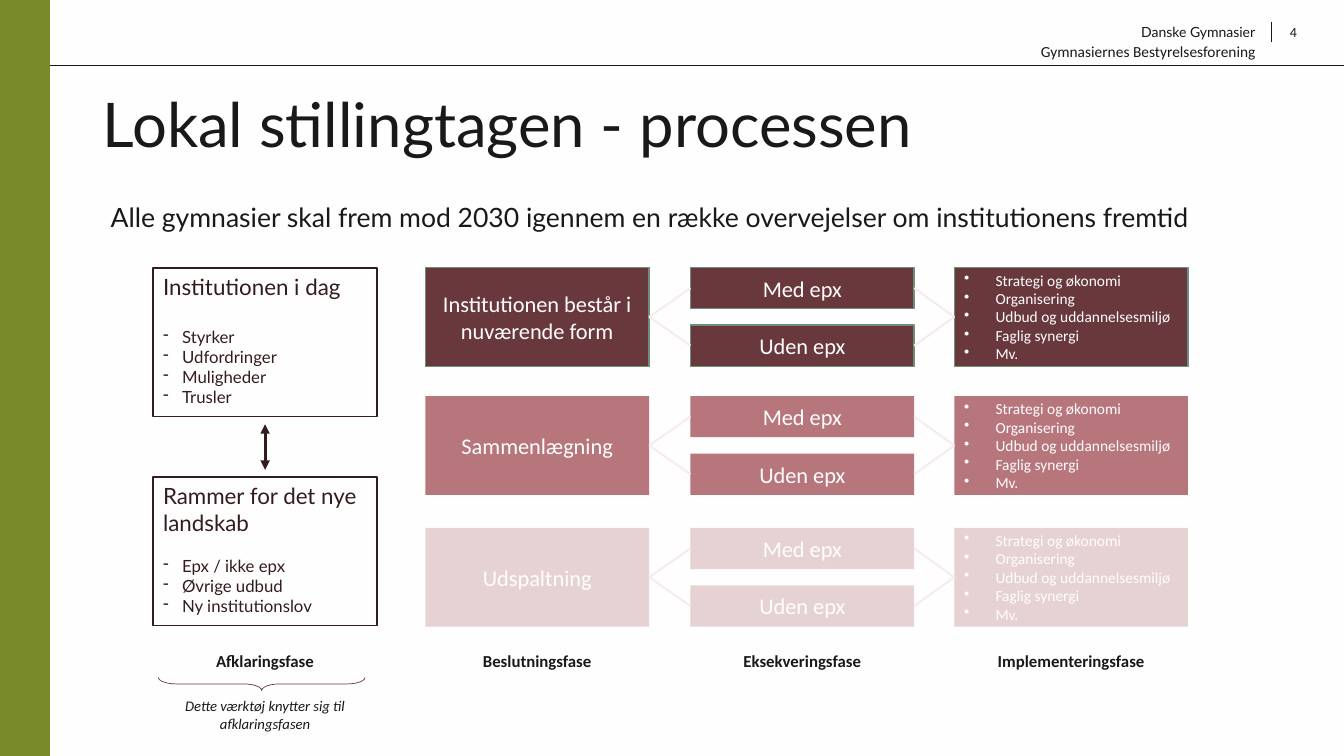
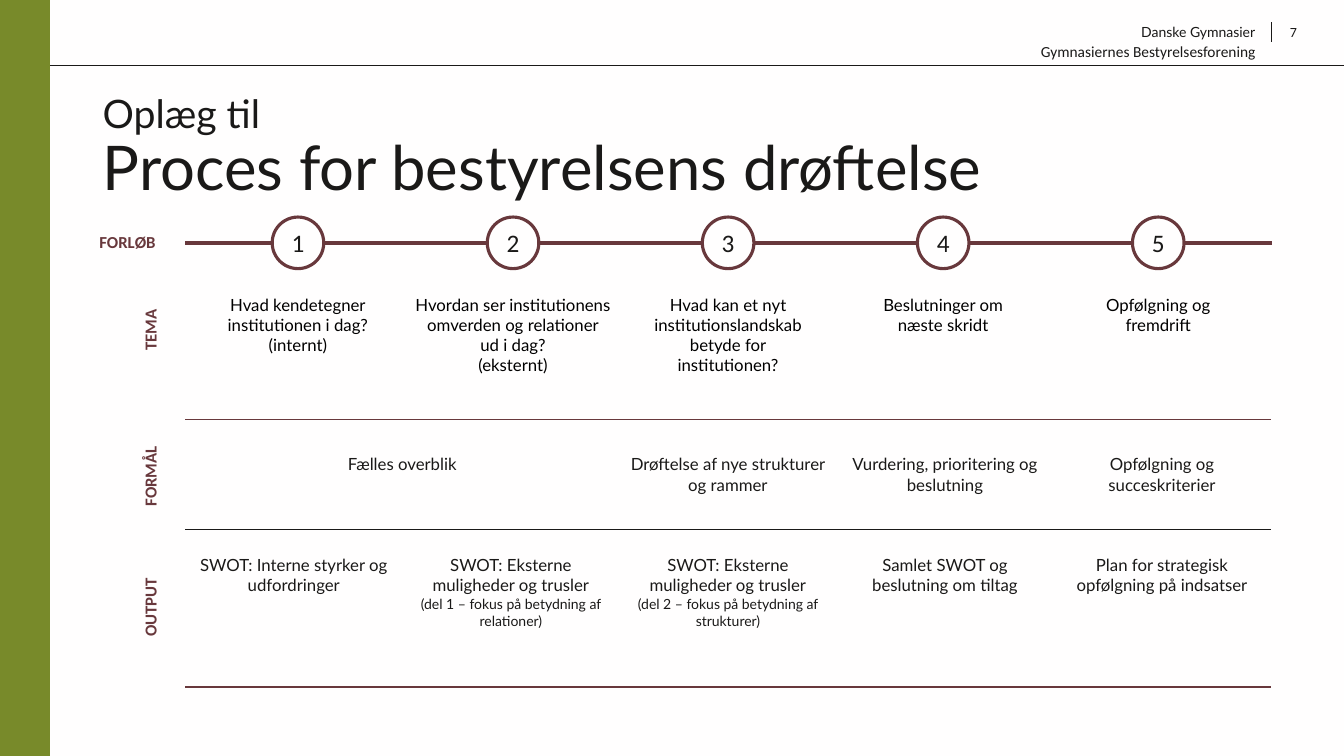
from lxml import etree
from pptx import Presentation
from pptx.dml.color import RGBColor
from pptx.enum import shapes, text
from pptx.oxml import ns
from pptx.util import Cm, Pt

PAPER = RGBColor(0xFF, 0xFE, 0xFE)
INK = RGBColor(0x1A, 0x19, 0x18)
BLACK = RGBColor(0, 0, 0)
GREEN = RGBColor(0x78, 0x8A, 0x2A)
SAGE = RGBColor(0x6E, 0x8D, 0x7B)
BROWN = RGBColor(0x34, 0x1C, 0x1E)
WINE = RGBColor(0x68, 0x38, 0x3C)
ROSE = RGBColor(0xB6, 0x76, 0x7C)
PALE = RGBColor(0xE6, 0xD2, 0xD3)
BLUSH = RGBColor(0xF7, 0xEB, 0xEF)

RECT = shapes.MSO_SHAPE.RECTANGLE
OVAL = shapes.MSO_SHAPE.OVAL
BRACE = shapes.MSO_SHAPE.RIGHT_BRACE
LEFT, MID, RIGHT = text.PP_ALIGN.LEFT, text.PP_ALIGN.CENTER, text.PP_ALIGN.RIGHT
TOP, HALF = text.MSO_ANCHOR.TOP, text.MSO_ANCHOR.MIDDLE


def put(page, at, lines=(), size=12, ink=INK, face="Calibri", align=MID, anchor=HALF,
        bold=None, slant=None, kind=None, fill=None, edge=None, width=1,
        mark=None, hang=0, first=0):
    """Add a text box, or a shape of the given kind; lines from number first on get the mark."""
    area = [Cm(n) for n in at]
    if kind is None:
        item = page.shapes.add_textbox(*area)
    else:
        item = page.shapes.add_shape(kind, *area)
        item.shadow.inherit = False
        if fill is None:
            item.fill.background()
        else:
            item.fill.solid()
            item.fill.fore_color.rgb = fill
        if edge is None:
            item.line.fill.background()
        else:
            item.line.color.rgb = edge
            item.line.width = Pt(width)
    frame = item.text_frame
    frame.word_wrap = True
    frame.vertical_anchor = anchor
    for n, line in enumerate(lines):
        para = frame.paragraphs[0] if n == 0 else frame.add_paragraph()
        para.text = line
        para.alignment = align
        if mark and n >= first:
            props = para._p.get_or_add_pPr()
            props.set("marL", str(Cm(hang)))
            props.set("indent", str(-Cm(hang)))
            etree.SubElement(props, ns.qn("a:buChar")).set("char", mark)
        font = para.font
        font.name, font.size, font.bold, font.italic = face, Pt(size), bold, slant
        font.color.rgb = ink
    return item


def rule(page, x1, y1, x2, y2, ink, width):
    """Add a straight line without a shadow."""
    line = page.shapes.add_connector(
        shapes.MSO_CONNECTOR.STRAIGHT, Cm(x1), Cm(y1), Cm(x2), Cm(y2))
    line.line.color.rgb = ink
    line.line.width = Pt(width)
    etree.SubElement(line._element.spPr, ns.qn("a:effectLst"))
    return line


deck = Presentation()
deck.slide_width, deck.slide_height = Cm(33.87), Cm(19.05)

# Shared header, band and title
pages = []
for number, title in [
    ("4", ["Lokal stillingtagen - processen"]),
    ("7", ["Oplæg til", "Proces for bestyrelsens drøftelse"]),
]:
    page = deck.slides.add_slide(deck.slide_layouts[6])
    page.background.fill.solid()
    page.background.fill.fore_color.rgb = PAPER
    rule(page, 0, 1.65, 33.87, 1.65, INK, 0.5)
    rule(page, 32.05, 0.56, 32.05, 1.07, INK, 0.75)
    put(page, (0, 0, 1.25, 19.05), kind=RECT, fill=GREEN, edge=GREEN)
    put(page, (28.07, 0.46, 3.81, 0.69), ["Danske Gymnasier"], 10,
        face="Lato", align=RIGHT, anchor=TOP)
    put(page, (25.98, 0.94, 6.27, 0.74), ["Gymnasiernes Bestyrelsesforening"], 11,
        align=LEFT, anchor=TOP)
    put(page, (32.26, 0.46, 1.24, 1.02), [number], 10, align=LEFT, anchor=TOP)
    head = put(page, (2.34, 2.26, 29.21, 3.68), title, 44, face="Lato",
               align=LEFT, anchor=TOP)
    for para in head.text_frame.paragraphs:
        para.line_spacing = 0.9
    if len(title) > 1:
        head.text_frame.paragraphs[0].font.size = Pt(28)
    pages.append(page)
choice, course = pages

# Slide 1: choices in three rows, phases in four columns
lead = put(choice, (2.54, 5.03, 29.21, 1.12),
           ["Alle gymnasier skal frem mod 2030 igennem en række overvejelser "
            "om institutionens fremtid"],
           19, face="Lato", align=LEFT, anchor=TOP)
lead.text_frame.paragraphs[0].line_spacing = 0.9

for top, gap, lines in [
    (6.75, 19, ["Institutionen i dag", "Styrker", "Udfordringer", "Muligheder", "Trusler"]),
    (12.02, 14, ["Rammer for det nye landskab", "Epx / ikke epx", "Øvrige udbud",
                 "Ny institutionslov"]),
]:
    card = put(choice, (3.86, top, 5.64, 3.75), lines, 12, BROWN, "Lato", LEFT, TOP,
               kind=RECT, fill=PAPER, edge=BROWN, mark="-", hang=0.48, first=1)
    paras = card.text_frame.paragraphs
    paras[0].font.size = Pt(16)
    paras[1].space_before = Pt(gap)

arrow = rule(choice, 6.68, 10.69, 6.68, 11.84, BROWN, 2.25)
for end in ("headEnd", "tailEnd"):
    etree.SubElement(arrow.line._get_or_add_ln(), ns.qn("a:" + end)).set("type", "triangle")

TASKS = ["Strategi og økonomi", "Organisering", "Udbud og uddannelsesmiljø",
         "Faglig synergi", "Mv."]
for top, name, fill, edge in [
    (6.74, "Institutionen består i nuværende form", WINE, SAGE),
    (9.98, "Sammenlægning", ROSE, None),
    (13.3, "Udspaltning", PALE, None),
]:
    look = dict(ink=PAPER, kind=RECT, fill=fill, edge=edge)
    form = put(choice, (10.72, top, 5.64, 2.49), [name], 16, **look)
    tasks = put(choice, (24.05, top, 5.89, 2.49), TASKS, 11, align=LEFT,
                mark="•", hang=0.79, **look)
    for n, label in enumerate(["Med epx", "Uden epx"]):
        option = put(choice, (17.4, top + n * 1.45, 5.64, 1.04), [label], 16, **look)
        for start, stop in [(form, option), (option, tasks)]:
            link = rule(choice, 0, 0, 1, 1, BLUSH, 1.5)
            link.begin_connect(start, 3)
            link.end_connect(stop, 1)

for left, wide, phase in [
    (3.86, 5.64, "Afklaringsfase"),
    (10.72, 5.64, "Beslutningsfase"),
    (17.4, 5.64, "Eksekveringsfase"),
    (24.05, 5.89, "Implementeringsfase"),
]:
    put(choice, (left, 16.03, wide, 1.22), [phase], bold=True)
put(choice, (3.86, 17.4, 5.64, 1.22), ["Dette værktøj knytter sig til afklaringsfasen"],
    10.5, slant=True)
brace = put(choice, (6.43, 14.63, 0.33, 5.21), kind=BRACE, edge=WINE, width=0.5)
brace.adjustments[0] = 1.375
brace.rotation = 90

# Slide 2: timeline with five steps
rule(course, 4.67, 6.12, 32.05, 6.12, WINE, 3)
for n, theme in enumerate([
    ["Hvad kendetegner", "institutionen i dag?", "(internt)"],
    ["Hvordan ser institutionens omverden og relationer", "ud i dag?", "(eksternt)"],
    ["Hvad kan et nyt institutionslandskab", "betyde for", "institutionen?"],
    ["Beslutninger om", "næste skridt"],
    ["Opfølgning og", "fremdrift"],
]):
    mid = 7.51 + n * 5.42
    put(course, (mid - 0.65, 5.47, 1.3, 1.3), [str(n + 1)], 18,
        kind=OVAL, fill=PAPER, edge=WINE, width=2.25)
    put(course, (mid - 2.97, 7.29, 5.94, 2.31), theme, 12, BLACK, "Lato", anchor=TOP)

put(course, (1.83, 5.51, 2.77, 1.19), ["FORLØB"], ink=WINE, bold=True)
for mid, label in [(8.32, "TEMA"), (12.0, "FORMÅL"), (15.3, "OUTPUT")]:
    side = put(course, (2.32, mid - 0.6, 3.36, 1.2), [label], ink=WINE, bold=True, anchor=TOP)
    side.rotation = 270

ROWS = [
    (3.58, WINE, 0.75, [""] * 5),
    (2.79, INK, 0.5, [
        "Fælles overblik", "", "Drøftelse af nye strukturer og rammer",
        "Vurdering, prioritering og beslutning", "Opfølgning og succeskriterier"]),
    (3.96, WINE, 1.5, [
        "SWOT: Interne styrker og udfordringer",
        "SWOT: Eksterne muligheder og trusler\n(del 1 – fokus på betydning af relationer)",
        "SWOT: Eksterne muligheder og trusler\n(del 2 – fokus på betydning af strukturer)",
        "Samlet SWOT og beslutning om tiltag",
        "Plan for strategisk opfølgning på indsatser"]),
]
grid = course.shapes.add_table(3, 5, Cm(4.67), Cm(6.98), Cm(27.35), Cm(10.33)).table
grid.first_row = grid.horz_banding = False
plain = "{2D5ABB26-0587-4C30-8999-92F81FD0307C}"
grid._tbl.tblPr.find(ns.qn("a:tableStyleId")).text = plain
for col in grid.columns:
    col.width = Cm(5.47)
for r, (high, ink, width, words) in enumerate(ROWS):
    grid.rows[r].height = Cm(high)
    for c, word in enumerate(words):
        cell = grid.cell(r, c)
        edge = etree.SubElement(cell._tc.get_or_add_tcPr(), ns.qn("a:lnB"))
        edge.set("w", str(Pt(width)))
        solid = etree.SubElement(edge, ns.qn("a:solidFill"))
        etree.SubElement(solid, ns.qn("a:srgbClr")).set("val", str(ink))
        cell.fill.background()
        cell.vertical_anchor = HALF if r == 1 else TOP
        if r == 2:
            cell.margin_top = Cm(0.64)
        cell.text = word
        for n, para in enumerate(cell.text_frame.paragraphs):
            para.alignment = MID
            para.font.name, para.font.size = "Lato", Pt(10 if n else 12)
            para.font.color.rgb = INK
grid.cell(1, 0).merge(grid.cell(1, 1))
grid.cell(1, 0).margin_bottom = Cm(0.66)

deck.save("out.pptx")
